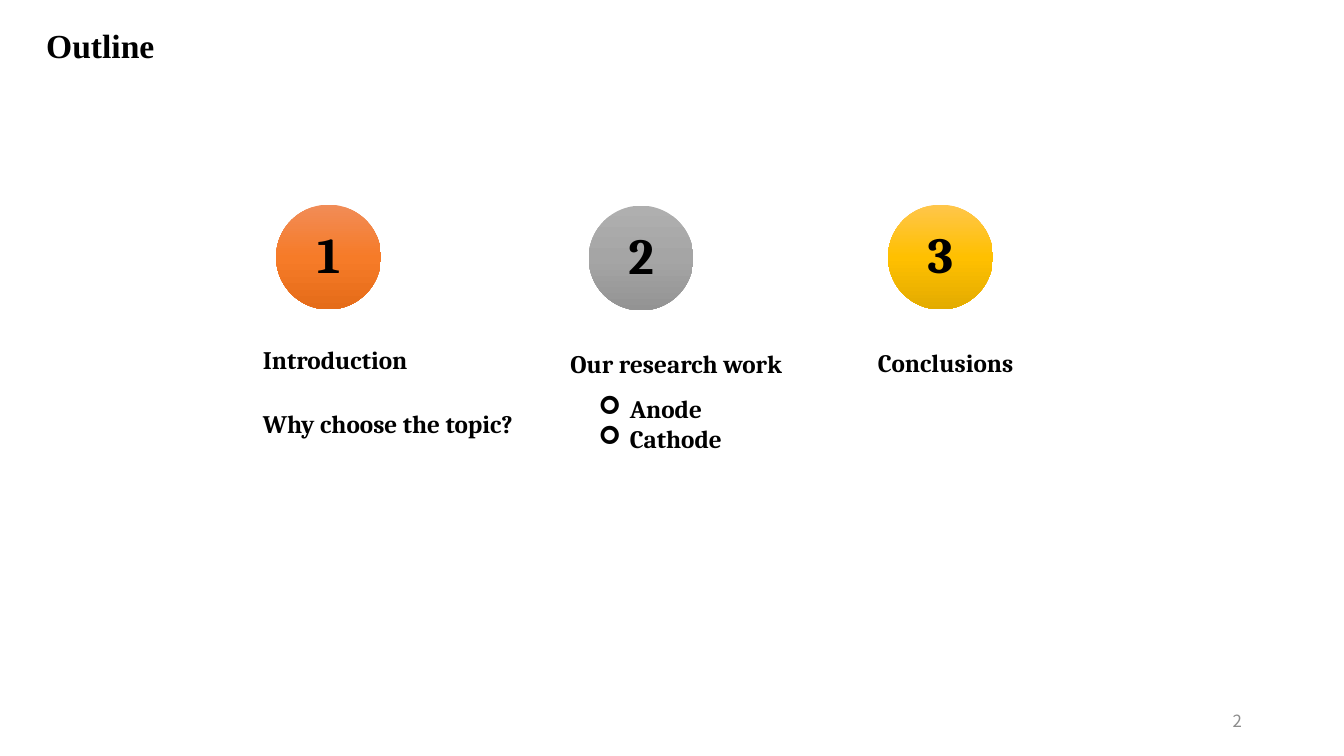
from copy import deepcopy

from pptx import Presentation
from pptx.dml.color import RGBColor
from pptx.enum.shapes import MSO_SHAPE
from pptx.enum.text import MSO_ANCHOR, PP_ALIGN
from pptx.oxml import parse_xml
from pptx.oxml.ns import nsdecls, qn
from pptx.util import Inches, Pt

OVAL = MSO_SHAPE.OVAL
TOP, MIDDLE = MSO_ANCHOR.TOP, MSO_ANCHOR.MIDDLE
LEFT, CENTER, RIGHT = PP_ALIGN.LEFT, PP_ALIGN.CENTER, PP_ALIGN.RIGHT
WIDTH, HEIGHT = Inches(13.333), Inches(7.5)
SERIF = "Cambria"
BLACK = "000000"
ROW = 5.33
BALL = 1.04 / 13.333 * 100
BALL_ROW = BALL * WIDTH / HEIGHT
INSET = 0.15

BALLS = [
    ("1", 20.55, 27.07, ("F18C57", "F67B28", "E56C19")),
    ("2", 43.8, 27.2, ("AFAFAF", "A5A5A5", "939393")),
    ("3", 66.08, 27.07, ("FFC64B", "FFC000", "E3AB00")),
]
LABELS = [
    ("Introduction", 18.83, 44.93),
    ("Why choose the topic?", 18.83, 53.33),
    ("Our research work", 41.7, 45.47),
    ("Conclusions", 64.58, 45.33),
]


def color(code):
    return RGBColor.from_string(code)


def area(x, y, w, h):
    return [int(share * side / 100) for share, side in
            zip((x, y, w, h), (WIDTH, HEIGHT, WIDTH, HEIGHT))]


def add_text(slide, lines, box, size=18, font=SERIF, ink=BLACK,
             bold=True, align=LEFT, anchor=TOP):
    frame = slide.shapes.add_textbox(*area(*box)).text_frame
    frame.word_wrap = True
    frame.vertical_anchor = anchor
    for i, line in enumerate(lines):
        para = frame.paragraphs[0] if i == 0 else frame.add_paragraph()
        para.alignment = align
        run = para.add_run()
        run.text = line
        run.font.size = Pt(size)
        run.font.name = font
        run.font.bold = bold
        run.font.color.rgb = color(ink)
    return frame


def add_bullets(frame, mark):
    for para in frame.paragraphs:
        props = para._p.get_or_add_pPr()
        props.set("marL", str(Inches(0.31)))
        props.set("indent", str(-Inches(0.31)))
        props.append(parse_xml(f'<a:buFont {nsdecls("a")} typeface="Wingdings"/>'))
        props.append(parse_xml(f'<a:buChar {nsdecls("a")} char="{mark}"/>'))


def add_ball(slide, digit, x, y, shades):
    ball = slide.shapes.add_shape(OVAL, *area(x, y, BALL, BALL_ROW))
    ball.shadow.inherit = False
    ball.line.fill.background()
    ball.fill.gradient()
    ball.fill.gradient_angle = 270
    stops = ball._element.spPr.find(qn("a:gradFill")).find(qn("a:gsLst"))
    stops.append(deepcopy(stops[0]))
    for stop, shade, place in zip(ball.fill.gradient_stops, shades, (0, 0.5, 1)):
        stop.color.rgb = color(shade)
        stop.position = place
    dx, dy = BALL * INSET, BALL_ROW * INSET
    box = (x + dx, y + dy, BALL - 2 * dx, BALL_ROW - 2 * dy)
    frame = add_text(slide, [digit], box, 36, align=CENTER, anchor=MIDDLE)
    frame.paragraphs[0].line_spacing = 0.9


def main():
    deck = Presentation()
    deck.slide_width, deck.slide_height = WIDTH, HEIGHT
    slide = deck.slides.add_slide(deck.slide_layouts[6])
    for ball in BALLS:
        add_ball(slide, *ball)
    for label, x, y in LABELS:
        add_text(slide, [label], (x, y, min(50, 100 - x), ROW))
    parts = add_text(slide, ["Anode", "Cathode"], (43.8, 51.33, 50, 9.47))
    add_bullets(parts, "➢")
    add_text(slide, ["Outline"], (2.7, 2.67, 19.43, 6.67), 24, "Times New Roman")
    add_text(slide, ["2"], (70.65, 92.67, 22.5, ROW), 12, "Noto Sans CJK SC",
             "8C8C8C", False, RIGHT, MIDDLE)
    deck.save("out.pptx")


if __name__ == "__main__":
    main()
